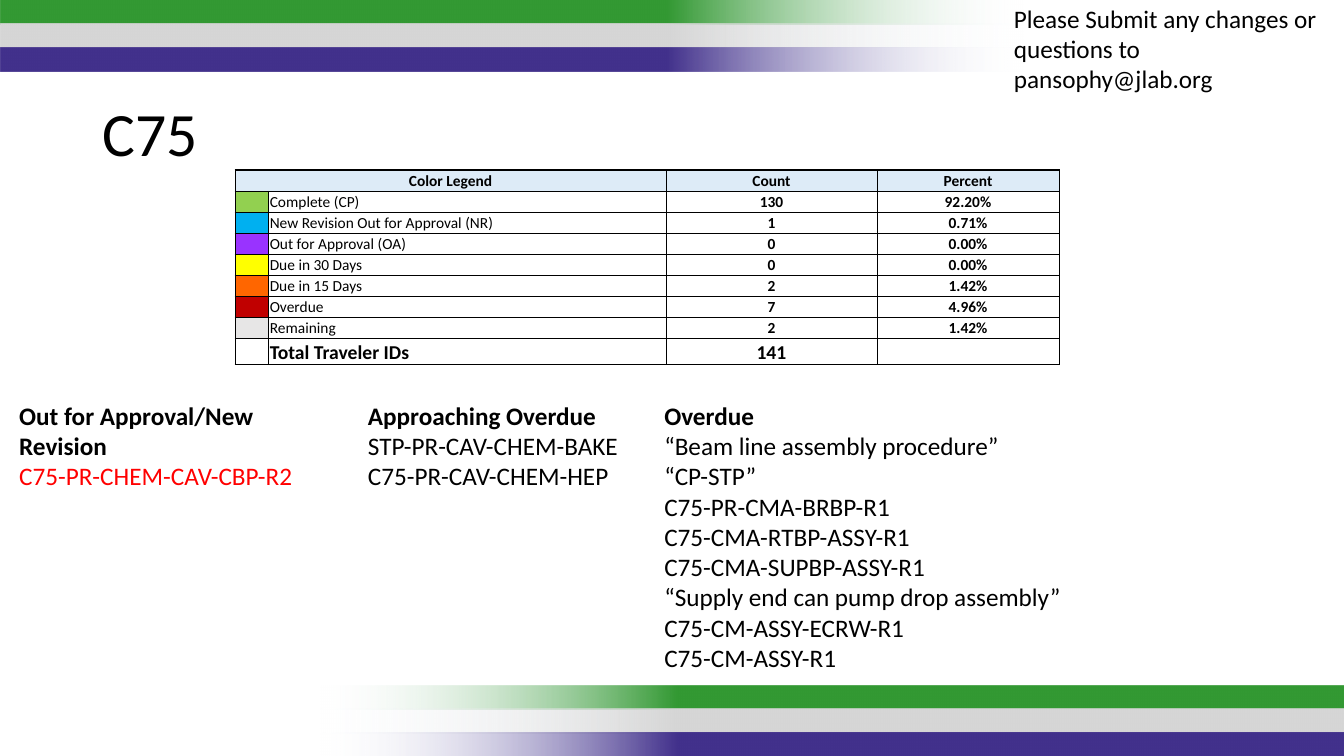
"""Build the C75 traveler status slide."""
from dataclasses import dataclass
from typing import Optional

from lxml import etree
from pptx import Presentation
from pptx import util as u
from pptx.dml.color import RGBColor
from pptx.enum import shapes, text
from pptx.oxml import ns

W, H = u.Inches(13.33), u.Inches(7.5)
COLS, ROWS = 160, 90
FONT = "Calibri"
C = {
    "black": "000000", "red": "FF0000", "fade": "F7FAFD",
    "green": "339933", "gray": "D6D6D6", "purple": "42318C",
    "header": "DDEBF7", "complete": "92D050", "revision": "00B0F0",
    "approval": "9933FF", "days30": "FFFF00", "days15": "FF6600",
    "overdue": "C00000", "remaining": "E7E6E6",
}


@dataclass
class Box:
    x: float
    y: float
    w: float
    h: float

    def emu(self) -> tuple:
        return cx(self.x), cy(self.y), cx(self.w), cy(self.h)


@dataclass
class TravelerList:
    box: Box
    heading: str
    items: list
    color: str = "black"


@dataclass
class LegendRow:
    fill: Optional[str]
    label: str
    count: str
    percent: str


STRIPES = ["green", "gray", "purple"]
STRIPE_W, STRIPE_H, STRIPE_STEP = 122, 2.88, 2.82
TITLE = Box(11.04, 10.32, 138, 11.88)
NOTE = Box(119.52, -0.24, 40.56, 12.12)
TABLE_X, TABLE_Y = 28, 20.25
TABLE_COLS = [4, 47.3, 25.1, 21.7]
ROW_H, TOTAL_H = 2.5, 3.2
LEGEND = [
    LegendRow("complete", "Complete (CP)", "130", "92.20%"),
    LegendRow("revision", "New Revision Out for Approval (NR)", "1", "0.71%"),
    LegendRow("approval", "Out for Approval (OA)", "0", "0.00%"),
    LegendRow("days30", "Due in 30 Days", "0", "0.00%"),
    LegendRow("days15", "Due in 15 Days", "2", "1.42%"),
    LegendRow("overdue", "Overdue", "7", "4.96%"),
    LegendRow("remaining", "Remaining", "2", "1.42%"),
    LegendRow(None, "Total Traveler IDs", "141", ""),
]
LISTS = [
    TravelerList(Box(1.08, 47.04, 41.4, 8.52), "Out for Approval/New Revision",
                 ["C75-PR-CHEM-CAV-CBP-R2"], "red"),
    TravelerList(Box(42.6, 47.04, 35.4, 12.12), "Approaching Overdue",
                 ["STP-PR-CAV-CHEM-BAKE", "C75-PR-CAV-CHEM-HEP"]),
    TravelerList(Box(77.88, 47.04, 72.36, 33.96), "Overdue",
                 ["“Beam line assembly procedure”", "“CP-STP”",
                  "C75-PR-CMA-BRBP-R1", "C75-CMA-RTBP-ASSY-R1",
                  "C75-CMA-SUPBP-ASSY-R1", "“Supply end can pump drop assembly”",
                  "C75-CM-ASSY-ECRW-R1", "C75-CM-ASSY-R1"]),
]


def cx(n: float) -> int:
    return round(W * n / COLS)


def cy(n: float) -> int:
    return round(H * n / ROWS)


def place(s, box: Box) -> None:
    s.left, s.top, s.width, s.height = box.emu()


def write(p, line: str, *, size: float = 18, color: str = "black",
          bold: bool = False, align=text.PP_ALIGN.LEFT, spacing: float = 1.0) -> None:
    p.alignment = align
    p.line_spacing = spacing
    p.space_before = u.Pt(0)
    if not line:
        etree.SubElement(p._p, ns.qn("a:endParaRPr"), sz=str(round(size * 100)))
        return
    r = p.add_run()
    r.text = line
    r.font.name, r.font.size, r.font.bold = FONT, u.Pt(size), bold
    r.font.color.rgb = RGBColor.from_string(C[color])


def add_stripe(slide, box: Box, color: str, rotation: int) -> None:
    s = slide.shapes.add_shape(shapes.MSO_SHAPE.RECTANGLE, *box.emu())
    s.rotation = rotation
    s.shadow.inherit = False
    s.line.fill.background()
    s.fill.gradient()
    s.fill.gradient_angle = 0
    stops = s._element.spPr.find(".//" + ns.qn("a:gsLst"))
    for stop in list(stops):
        stops.remove(stop)
    for pos, name in [(0, "fade"), (35, color), (100, color)]:
        stop = etree.SubElement(stops, ns.qn("a:gs"), pos=str(pos * 1000))
        rgb = etree.SubElement(stop, ns.qn("a:srgbClr"), val=C[name])
        if name == "fade":
            etree.SubElement(rgb, ns.qn("a:alpha"), val="0")


def add_list(s, item: TravelerList) -> None:
    place(s, item.box)
    tf = s.text_frame
    tf.word_wrap = True
    tf.auto_size = text.MSO_AUTO_SIZE.SHAPE_TO_FIT_TEXT
    tf.vertical_anchor = text.MSO_ANCHOR.TOP
    for i, line in enumerate([item.heading, *item.items]):
        p = tf.add_paragraph() if i else tf.paragraphs[0]
        write(p, line, bold=i == 0, color=item.color if i else "black")
        pPr = p._p.get_or_add_pPr()
        pPr.set("marL", "0")
        pPr.set("indent", "0")
        etree.SubElement(pPr, ns.qn("a:buNone"))


def set_borders(cell, outer: dict) -> None:
    tcPr = cell._tc.get_or_add_tcPr()
    for side in "LRTB":
        width = u.Pt(1 if outer[side] else 0.5)
        ln = etree.SubElement(tcPr, ns.qn("a:ln" + side), w=str(width))
        fill = etree.SubElement(ln, ns.qn("a:solidFill"))
        etree.SubElement(fill, ns.qn("a:srgbClr"), val=C["black"])


def fill_cell(cell, line: str, fill: Optional[str], outer: dict, **fmt) -> None:
    cell.margin_left = cell.margin_right = cell.margin_top = u.Inches(0.01)
    cell.margin_bottom = 0
    cell.vertical_anchor = text.MSO_ANCHOR.BOTTOM
    set_borders(cell, outer)
    if fill:
        cell.fill.solid()
        cell.fill.fore_color.rgb = RGBColor.from_string(C[fill])
    else:
        cell.fill.background()
    write(cell.text_frame.paragraphs[0], line, **fmt)


def add_legend(slide) -> None:
    last = len(LEGEND)
    box = Box(TABLE_X, TABLE_Y, sum(TABLE_COLS), ROW_H * last + TOTAL_H)
    tbl = slide.shapes.add_table(last + 1, len(TABLE_COLS), *box.emu()).table
    tbl.first_row = tbl.horz_banding = False
    for col, width in zip(tbl.columns, TABLE_COLS):
        col.width = cx(width)
    lines = [["Color Legend", "", "Count", "Percent"]]
    lines += [["", row.label, row.count, row.percent] for row in LEGEND]
    for i, row in enumerate(lines):
        tbl.rows[i].height = cy(TOTAL_H if i == last else ROW_H)
        for j, line in enumerate(row):
            fill = "header" if i == 0 else LEGEND[i - 1].fill if j == 0 else None
            outer = {"L": j == 0, "R": j == len(row) - 1, "T": i == 0, "B": i == last}
            centred = i == 0 or j > 1
            fill_cell(tbl.cell(i, j), line, fill, outer,
                      size=14 if i == last and line else 11, bold=centred or i == last,
                      align=text.PP_ALIGN.CENTER if centred else text.PP_ALIGN.LEFT)
    tbl.cell(0, 0).merge(tbl.cell(0, 1))


def main() -> None:
    prs = Presentation()
    prs.slide_width, prs.slide_height = W, H
    slide = prs.slides.add_slide(prs.slide_layouts[4])
    for x, y, rotation in [(0, 0, 180), (38, 81.6, 0)]:
        for i, color in enumerate(STRIPES):
            add_stripe(slide, Box(x, y + i * STRIPE_STEP, STRIPE_W, STRIPE_H),
                       color, rotation)
    title, *bodies, spare = slide.placeholders
    place(title, TITLE)
    title.text_frame.vertical_anchor = text.MSO_ANCHOR.MIDDLE
    write(title.text_frame.paragraphs[0], "C75", size=44, spacing=0.9)
    add_legend(slide)
    for s, item in zip(bodies, LISTS):
        add_list(s, item)
    spare._element.getparent().remove(spare._element)
    tf = slide.shapes.add_textbox(*NOTE.emu()).text_frame
    tf.word_wrap = True
    tf.auto_size = text.MSO_AUTO_SIZE.SHAPE_TO_FIT_TEXT
    write(tf.paragraphs[0], "Please Submit any changes or questions to pansophy@jlab.org")
    prs.save("out.pptx")


if __name__ == "__main__":
    main()
